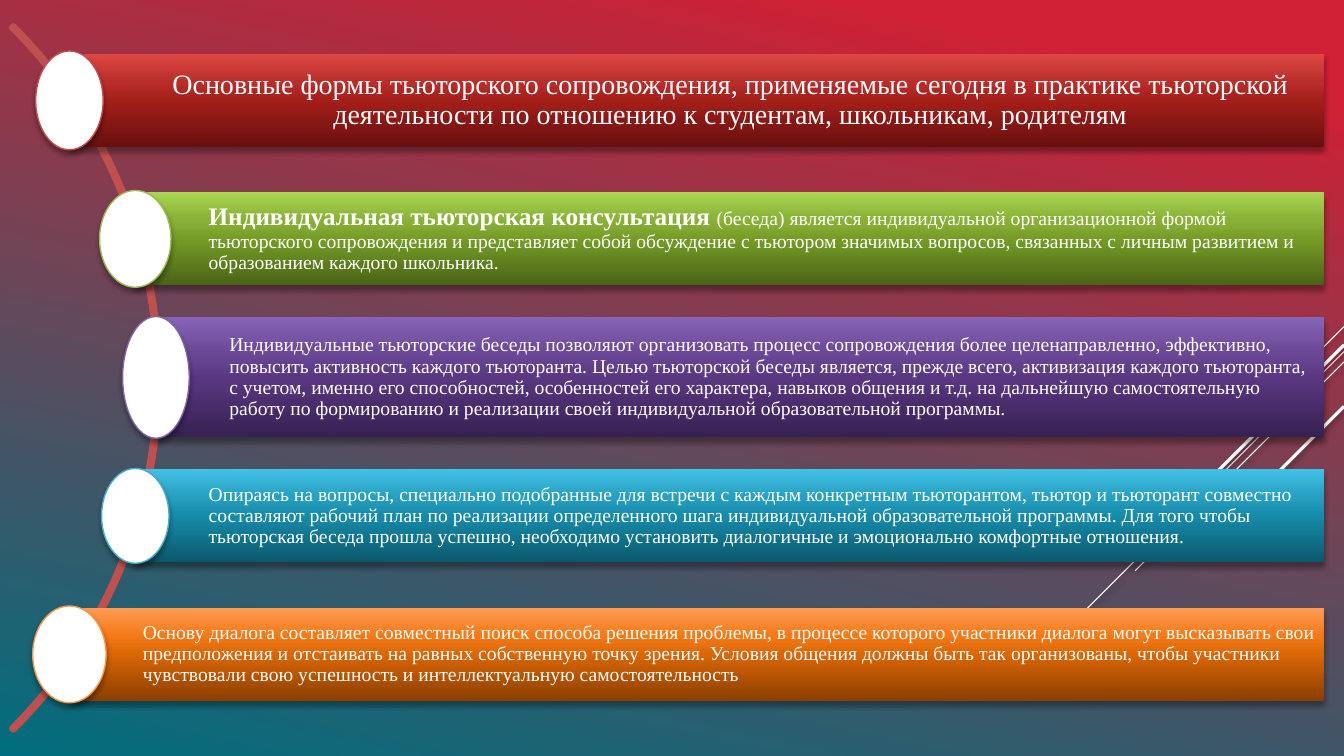
from lxml.etree import SubElement
from pptx import Presentation
from pptx.dml.color import RGBColor
from pptx.enum.shapes import MSO_CONNECTOR, MSO_SHAPE
from pptx.enum.text import MSO_ANCHOR, MSO_AUTO_SIZE, PP_ALIGN
from pptx.oxml.ns import qn
from pptx.util import Cm, Pt

COLORS = {"white": "FFFFFF", "black": "000000", "arc": "C0504D"}
BACKGROUND = [(10, "CF2035"), (100, "006E7E")]
STOPS = (0, 50, 70, 100)
FONT = "Times New Roman"

TITLE = ("Основные формы тьюторского сопровождения, применяемые сегодня в практике "
         "тьюторской деятельности по отношению к студентам, школьникам, родителям")

# Runs are (text, size, bold); lengths are in centimetres
BARS = [
    {"runs": [(TITLE, 20, False)],
     "left": 1.75, "height": 2.34, "inset": 0.15, "oval": (1.70, 2.49), "outline": "C0504D",
     "shades": ("68100E", "A41E1A", "B92E2A", "DF4845")},
    {"runs": [("Индивидуальная тьюторская консультация ", 18, True),
              ("(беседа) является индивидуальной организационной формой тьюторского "
               "сопровождения и представляет собой обсуждение с тьютором значимых вопросов, "
               "связанных с личным развитием и образованием каждого школьника.", 14, False)],
     "left": 3.41, "height": 2.34, "inset": 0.13, "oval": (1.80, 2.44), "outline": "9BBB59",
     "shades": ("4A6316", "769C27", "89B137", "A9D651")},
    {"runs": [("Индивидуальные тьюторские беседы позволяют организовать процесс сопровождения "
               "более целенаправленно, эффективно, повысить активность каждого тьюторанта. "
               "Целью тьюторской беседы является, прежде всего, активизация каждого "
               "тьюторанта, с учетом, именно его способностей, особенностей его характера, "
               "навыков общения и т.д. на дальнейшую самостоятельную работу по формированию "
               "и реализации своей индивидуальной образовательной программы.", 14, False)],
     "left": 3.93, "height": 3.02, "inset": 0.10, "oval": (1.68, 3.07), "outline": "8064A2",
     "shades": ("372152", "593782", "6A4895", "8763B7")},
    {"runs": [("Опираясь на вопросы, специально подобранные для встречи с каждым конкретным "
               "тьюторантом, тьютор и тьюторант совместно составляют рабочий план по "
               "реализации определенного шага индивидуальной образовательной программы. Для "
               "того чтобы тьюторская беседа прошла успешно, необходимо установить "
               "диалогичные и эмоционально комфортные отношения.", 14, False)],
     "left": 3.41, "height": 2.34, "inset": 0.10, "oval": (1.70, 2.39), "outline": "4BACC6",
     "shades": ("0B586C", "178BAA", "279FC0", "41C1E6")},
    {"runs": [("Основу диалога составляет совместный поиск способа решения проблемы, в "
               "процессе которого участники диалога могут высказывать свои предположения и "
               "отстаивать на равных собственную точку зрения. Условия общения должны быть "
               "так организованы, чтобы участники чувствовали свою успешность и "
               "интеллектуальную самостоятельность", 14, False)],
     "left": 1.75, "height": 2.34, "inset": 0.10, "oval": (1.85, 2.44), "outline": "F79646",
     "shades": ("8B3F00", "DA6606", "F47917", "FF9C54")},
]
# Start height on the right edge, run along the 45° diagonal, line width
RAYS = [(8.23, 2.54, 0.75), (8.86, 8.28, 0.75), (9.12, 5.26, 0.75),
        (8.69, 4.85, 2.25), (10.24, 3.53, 2.25)]

SLIDE_W, SLIDE_H = 33.87, 19.05
BAR_RIGHT, FIRST_CENTER, PITCH = 33.36, 2.53, 3.49
TEXT_INDENT = 1.85
ARC_LEFT, ARC_SIZE = -21.06, 25.07


def rgb(value):
    return RGBColor.from_string(value)


def set_gradient(fill, element, stops, angle):
    """Fill with (percent, colour) stops along a clockwise angle."""
    fill.gradient()
    fill.gradient_angle = 360 - angle
    stop_list = next(element.iter(qn("a:gsLst")))
    for old in list(stop_list):
        stop_list.remove(old)
    for position, color in stops:
        stop = SubElement(stop_list, qn("a:gs"), pos=str(position * 1000))
        SubElement(stop, qn("a:srgbClr"), val=color)


def add_shadow(shape):
    effects = SubElement(shape.element.find(qn("p:spPr")), qn("a:effectLst"))
    outer = SubElement(effects, qn("a:outerShdw"), blurRad=str(Pt(4)), dist=str(Pt(3)),
                       dir="5400000", rotWithShape="0")
    color = SubElement(outer, qn("a:srgbClr"), val=COLORS["black"])
    SubElement(color, qn("a:alpha"), val="35000")


def set_line(shape, color, width):
    shape.line.color.rgb = rgb(color)
    shape.line.width = Pt(width)


def add_run(p, text, size=14, bold=False, color=COLORS["white"]):
    r = p.add_run()
    r.text = text
    r.font.name, r.font.size, r.font.bold = FONT, Pt(size), bold
    r.font.color.rgb = rgb(color)


def format_bar(bar, data, center, align):
    bar.left, bar.top = Cm(data["left"]), Cm(center - data["height"] / 2)
    bar.width, bar.height = Cm(BAR_RIGHT - data["left"]), Cm(data["height"])
    set_gradient(bar.fill, bar.element, zip(STOPS, data["shades"]), 270)
    bar.line.fill.background()
    add_shadow(bar)
    tf = bar.text_frame
    tf.word_wrap, tf.auto_size = True, MSO_AUTO_SIZE.NONE
    tf.vertical_anchor = MSO_ANCHOR.MIDDLE
    tf.margin_left = Cm(TEXT_INDENT)
    tf.margin_right = tf.margin_top = tf.margin_bottom = Cm(data["inset"])
    p = tf.paragraphs[0]
    p.alignment, p.line_spacing = align, 0.9
    for text, size, bold in data["runs"]:
        add_run(p, text, size=size, bold=bold)


def add_oval(s, data, center):
    w, h = data["oval"]
    oval = s.shapes.add_shape(MSO_SHAPE.OVAL, Cm(data["left"] - w / 2), Cm(center - h / 2),
                              Cm(w), Cm(h))
    oval.fill.solid()
    oval.fill.fore_color.rgb = rgb(COLORS["white"])
    set_line(oval, data["outline"], 1)
    add_shadow(oval)


def add_backdrop(s):
    set_gradient(s.background.fill, s.element, BACKGROUND, 102)
    for top, run, width in RAYS:
        ray = s.shapes.add_connector(MSO_CONNECTOR.STRAIGHT, Cm(SLIDE_W), Cm(top),
                                     Cm(SLIDE_W - run), Cm(top + run))
        set_line(ray, COLORS["white"], width)
        add_shadow(ray)
    arc = s.shapes.add_shape(MSO_SHAPE.BLOCK_ARC, Cm(ARC_LEFT), Cm((SLIDE_H - ARC_SIZE) / 2),
                             Cm(ARC_SIZE), Cm(ARC_SIZE))
    for i, value in enumerate((189, 27, 0.002)):
        arc.adjustments[i] = value
    arc.fill.background()
    set_line(arc, COLORS["arc"], 4.33)
    arc.shadow.inherit = False
    return arc


def main():
    prs = Presentation()
    prs.slide_width, prs.slide_height = Cm(SLIDE_W), Cm(SLIDE_H)
    s = prs.slides.add_slide(prs.slide_layouts[5])
    arc = add_backdrop(s)
    title = s.shapes.title
    arc.element.addnext(title.element)  # the title bar lies in front of the arc
    for i, data in enumerate(BARS):
        center = FIRST_CENTER + i * PITCH
        if i == 0:
            format_bar(title, data, center, PP_ALIGN.CENTER)
        else:
            bar = s.shapes.add_shape(MSO_SHAPE.RECTANGLE, 0, 0, 0, 0)
            format_bar(bar, data, center, PP_ALIGN.LEFT)
        add_oval(s, data, center)
    prs.save("out.pptx")


if __name__ == "__main__":
    main()
